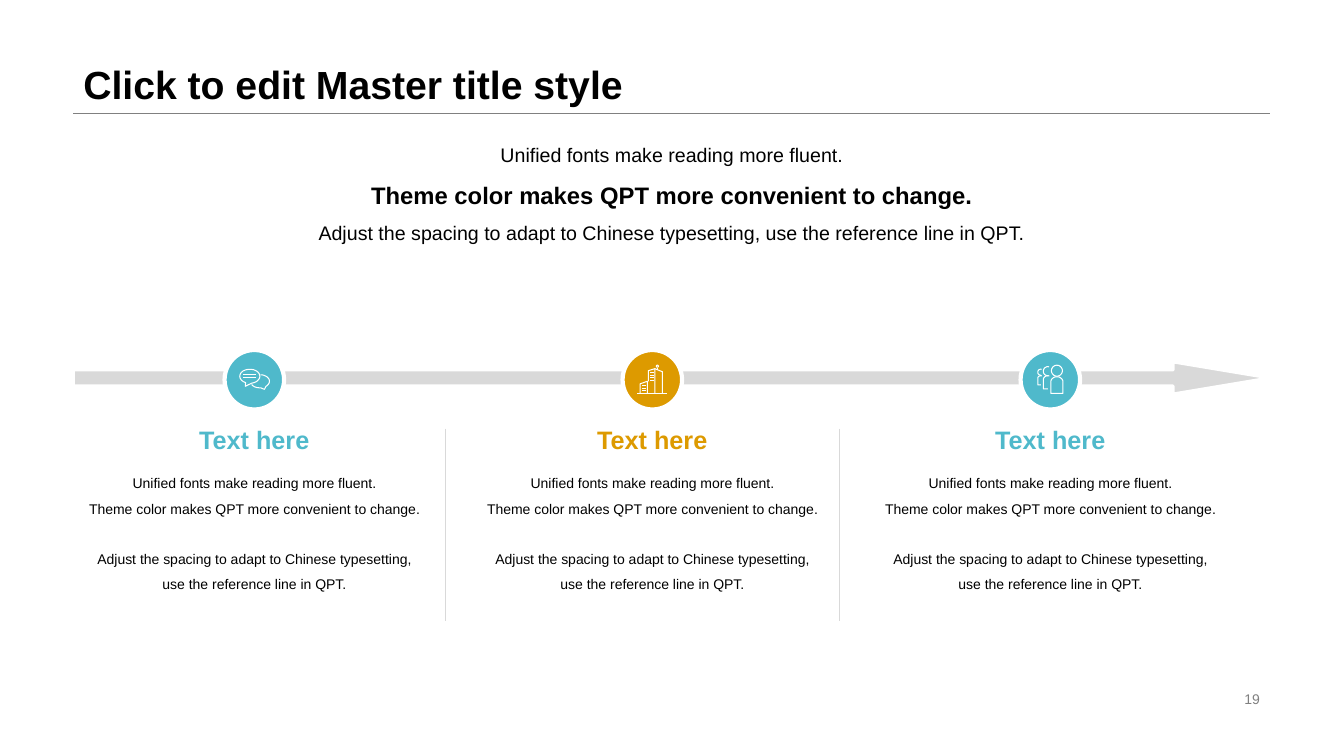
"""Build a three-step timeline slide with icons and captions."""
from math import cos, radians, sin

from lxml import etree
from pptx import Presentation, util as u
from pptx.dml.color import RGBColor
from pptx.enum import shapes, text
from pptx.oxml.ns import qn

Cm, Pt = u.Cm, u.Pt
AL, AN = text.PP_ALIGN, text.MSO_ANCHOR

THEME = dict(font="Arial", ink="000000", grey="808080", pale="D9D9D9",
             white="FFFFFF", teal="4FB9CB", amber="DD9A00",
             title=28, strong=17, lead=14, label=18, body=10)

TITLE = "Click to edit Master title style"
PAGE = "19"
FLUENT = "Unified fonts make reading more fluent."
COLOR = "Theme color makes QPT more convenient to change."
SPACING = ("Adjust the spacing to adapt to Chinese typesetting, "
           "use the reference line in QPT.")
LEAD = [(FLUENT, "lead", False), (COLOR, "strong", True), (SPACING, "lead", False)]
STEPS = [("Text here", "teal", "chat"), ("Text here", "amber", "city"),
         ("Text here", "teal", "people")]


def arc(cx, cy, rx, ry, start, end, n=20):
    angles = [radians(start + (end - start) * i / n) for i in range(n + 1)]
    return [(cx + rx * cos(a), cy + ry * sin(a)) for a in angles]


def rungs(left, right, heights):
    return [[(left, y), (right, y)] for y in heights]


ICONS = {
    "chat": [
        arc(-4.5, -3.5, 10, 7, 115, 440) + [(-9, 6.5), (-8.7, 2.8)],
        arc(5.5, 1.5, 9.5, 6.5, -85, 50) + [(10, 9.5)] + arc(5.5, 1.5, 9.5, 6.5, 85, 150),
        *rungs(-11, 2, (-5, -2))],
    "city": [
        [(-12, 13.5), (-12, 4), (-5, 1.5), (-5, 13.5)],
        [(-4, 1.5), (-4, -9), (2.5, -11), (2.5, 13.5)],
        [(2.5, -11), (10, -8), (10, 13.5)],
        [(5, -12), (5, -10)],
        arc(5, -13.5, 1, 1, 0, 360),
        *rungs(-15, 15, (13.5,)),
        *rungs(-2, 2, (-7, -4.5, -2, 1)),
        *rungs(-10, -6, (6, 9, 11))],
    "people": [
        arc(6.5, -9, 5.5, 5.5, 0, 360),
        [(0.5, 13.5)] + arc(6.5, 2, 6, 5, 180, 360) + [(12.5, 13.5), (0.5, 13.5)],
        arc(-2.5, -8.5, 4.5, 4.5, 285, 90),
        arc(-2.5, 0, 4.5, 4, 290, 180) + [(-7, 9), (-2.5, 9)],
        arc(-9.5, -7.5, 3, 3, 285, 90),
        arc(-9.5, -1.5, 3, 2.5, 290, 180) + [(-12.5, 5), (-9.5, 5)]],
}


def rgb(name):
    return RGBColor.from_string(THEME[name])


def add_text(s, box, lines, color="ink", align=AL.LEFT, anchor=AN.TOP,
             spacing=1.0, wrap=True):
    tf = s.shapes.add_textbox(*map(Cm, box)).text_frame
    tf.word_wrap, tf.vertical_anchor = wrap, anchor
    for i, (words, size, bold, *before) in enumerate(lines):
        p = tf.add_paragraph() if i else tf.paragraphs[0]
        p.text, p.alignment, p.line_spacing = words, align, spacing
        if before:
            p.space_before = Pt(before[0])
        f = p.font
        f.name, f.size, f.bold = THEME["font"], Pt(THEME[size]), bold
        f.color.rgb = rgb(color)


def add_rule(s, x1, y1, x2, y2, color):
    c = s.shapes.add_connector(shapes.MSO_CONNECTOR.STRAIGHT,
                               *map(Cm, (x1, y1, x2, y2)))
    c.line.color.rgb, c.line.width = rgb(color), Pt(0.25)
    etree.SubElement(c._element.spPr, qn("a:effectLst"))


def add_solid(s, kind, box, fill, weight):
    sp = s.shapes.add_shape(kind, *map(Cm, box))
    sp.shadow.inherit = False
    sp.fill.solid()
    sp.fill.fore_color.rgb = rgb(fill)
    sp.line.color.rgb, sp.line.width = rgb("white"), Pt(weight)
    return sp


def add_icon(s, strokes, cx, cy):
    strokes = [[(round(x * 10), round(y * 10)) for x, y in st] for st in strokes]
    fb = s.shapes.build_freeform(*strokes[0][0], scale=Cm(0.00254))
    for i, stroke in enumerate(strokes):
        if i:
            fb.move_to(*stroke[0])
        fb.add_line_segments(stroke[1:], close=False)
    sp = fb.convert_to_shape(Cm(cx), Cm(cy))
    sp.shadow.inherit = False
    sp.fill.background()
    sp.line.color.rgb, sp.line.width = rgb("white"), Pt(0.75)


def main():
    prs = Presentation()
    prs.slide_width, prs.slide_height = Cm(33.87), Cm(19.05)
    s = prs.slides.add_slide(prs.slide_layouts[6])
    left, width = 1.85, 30.15

    add_rule(s, left, 2.85, left + width, 2.85, "grey")
    add_text(s, (left, 0, width, 2.85), [(TITLE, "title", True)],
             anchor=AN.BOTTOM, spacing=0.9)
    add_text(s, (23.93, 17.32, 8.07, 0.58), [(PAGE, "body", False)],
             "grey", AL.RIGHT, AN.MIDDLE)
    add_text(s, (6.99, 3.18, 19.89, 3.63), LEAD, align=AL.CENTER, spacing=1.5)

    arrow = add_solid(s, shapes.MSO_SHAPE.RIGHT_ARROW,
                      (left, 9.12, width, 0.81), "pale", 2.25)
    arrow.adjustments[0], arrow.adjustments[1] = 0.5, 3.005

    first, pitch, mid, dot, column = 6.41, 10.03, 9.57, 1.5, 9.07
    body = [(FLUENT, "body", False), (COLOR, "body", False),
            (SPACING, "body", False, 18)]
    for i, (label, color, icon) in enumerate(STEPS):
        cx = first + i * pitch
        x = cx - column / 2
        add_solid(s, shapes.MSO_SHAPE.OVAL,
                  (cx - dot / 2, mid - dot / 2, dot, dot), color, 3)
        add_icon(s, ICONS[icon], cx, mid)
        add_text(s, (x, 10.54, column, 1.09), [(label, "label", True)],
                 color, AL.CENTER, AN.MIDDLE, wrap=False)
        add_text(s, (x, 11.63, column, 4.14), body, align=AL.CENTER, spacing=1.5)
    for x in (11.23, 21.16):
        add_rule(s, x, 10.8, x, 15.65, "pale")

    prs.save("out.pptx")


if __name__ == "__main__":
    main()
